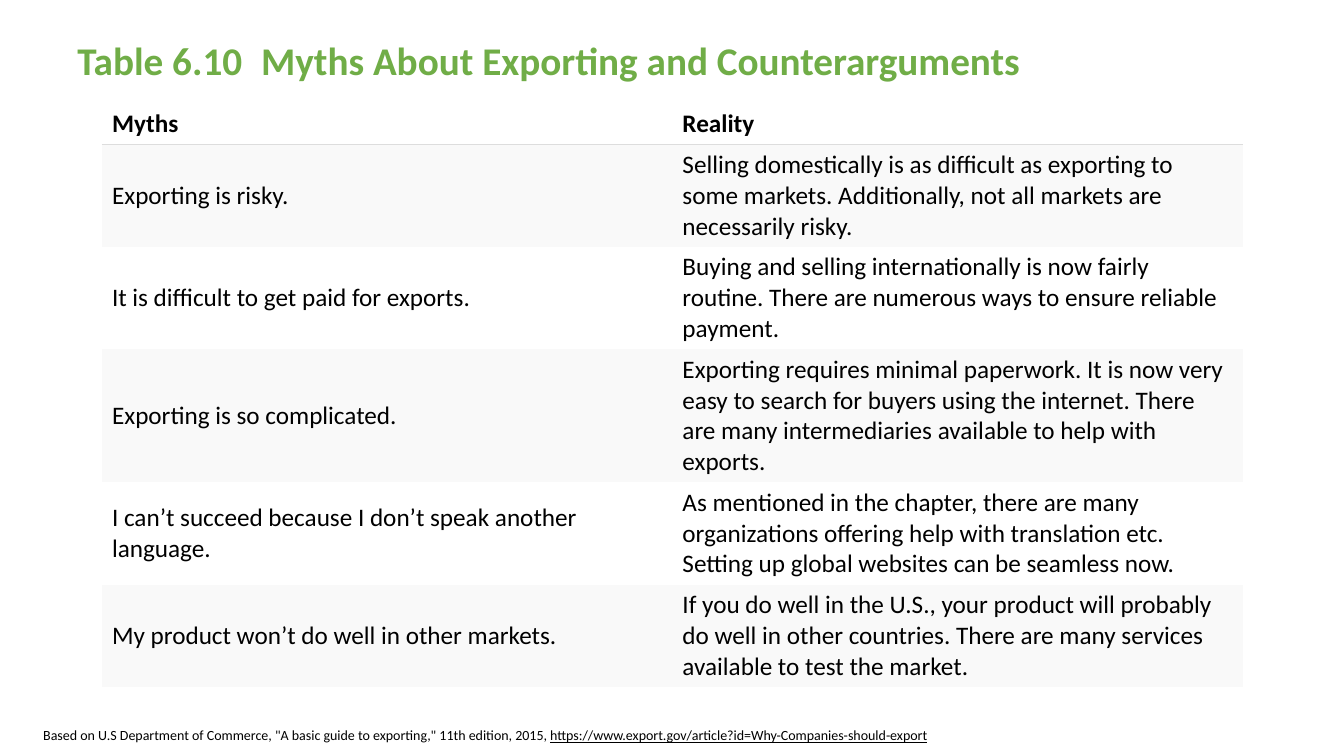
from lxml.etree import SubElement
from pptx import Presentation
from pptx.dml.color import RGBColor as RGB
from pptx.enum.text import MSO_ANCHOR as Anchor
from pptx.oxml.ns import qn
from pptx.util import Cm, Pt

COLORS = {"title": "70AD47", "text": "000000", "band": "F9F9F9", "rule": "DDDDDD"}
PLAIN = "{2D5ABB26-0587-4C30-8999-92F81FD0307C}"  # no style, no grid
ROWS = [
    (1.02, "Myths", "Reality"),
    (2.58, "Exporting is risky.",
     "Selling domestically is as difficult as exporting to some markets. "
     "Additionally, not all markets are necessarily risky."),
    (2.58, "It is difficult to get paid for exports.",
     "Buying and selling internationally is now fairly routine. "
     "There are numerous ways to ensure reliable payment."),
    (3.35, "Exporting is so complicated.",
     "Exporting requires minimal paperwork. It is now very easy to search for "
     "buyers using the internet. There are many intermediaries available to "
     "help with exports."),
    (2.58, "I can’t succeed because I don’t speak another language.",
     "As mentioned in the chapter, there are many organizations offering help "
     "with translation etc. Setting up global websites can be seamless now."),
    (2.58, "My product won’t do well in other markets.",
     "If you do well in the U.S., your product will probably do well in other "
     "countries. There are many services available to test the market."),
]


def style(font, size, color, bold=False):
    font.name, font.size, font.bold = "Calibri", Pt(size), bold
    font.color.rgb = RGB.from_string(COLORS[color])


deck = Presentation()
deck.slide_width, deck.slide_height = Cm(33.87), Cm(19.05)
slide = deck.slides.add_slide(deck.slide_layouts[6])
shapes = slide.shapes

# Title, with a tab stop between number and name
frame = shapes.add_textbox(Cm(1.7), Cm(0.66), Cm(29.87), Cm(1.83)).text_frame
frame.word_wrap = True
frame.vertical_anchor = Anchor.MIDDLE
para = frame.paragraphs[0]
para.text = "Table 6.10\tMyths About Exporting and Counterarguments"
para.line_spacing = 0.9
tabs = SubElement(para._p.get_or_add_pPr(), qn("a:tabLst"))
SubElement(tabs, qn("a:tab"), pos=str(Cm(4.63)), algn="l")
style(para.font, 28, "title", True)

# Table
height = sum(row[0] for row in ROWS)
holder = shapes.add_table(len(ROWS), 2, Cm(2.57), Cm(2.62), Cm(28.75), Cm(height))
table = holder.table
table.horz_banding = False
for tag in holder.element.iter(qn("a:tableStyleId")):
    tag.text = PLAIN

for i, (high, *texts) in enumerate(ROWS):
    table.rows[i].height = Cm(high)
    for j, text in enumerate(texts):
        cell = table.cell(i, j)
        cell.text = text
        cell.vertical_anchor = Anchor.MIDDLE if i else Anchor.BOTTOM
        style(cell.text_frame.paragraphs[0].font, 18, "text", i == 0)
        if i == 0:
            line = SubElement(cell._tc.get_or_add_tcPr(), qn("a:lnB"), w=str(Pt(1)))
            fill = SubElement(line, qn("a:solidFill"))
            SubElement(fill, qn("a:srgbClr"), val=COLORS["rule"])
        if i % 2:
            cell.fill.solid()
            cell.fill.fore_color.rgb = RGB.from_string(COLORS["band"])
        else:
            cell.fill.background()

# Credit line
frame = shapes.add_textbox(Cm(0.84), Cm(18.19), Cm(23.19), Cm(1.12)).text_frame
frame.word_wrap = False
para = frame.paragraphs[0]
para.add_run().text = ('Based on U.S Department of Commerce, "A basic guide to '
                       'exporting," 11th edition, 2015, ')
link = para.add_run()
link.text = "https://www.export.gov/article?id=Why-Companies-should-export"
link.font.underline = True
style(para.font, 10, "text")

deck.save("out.pptx")
